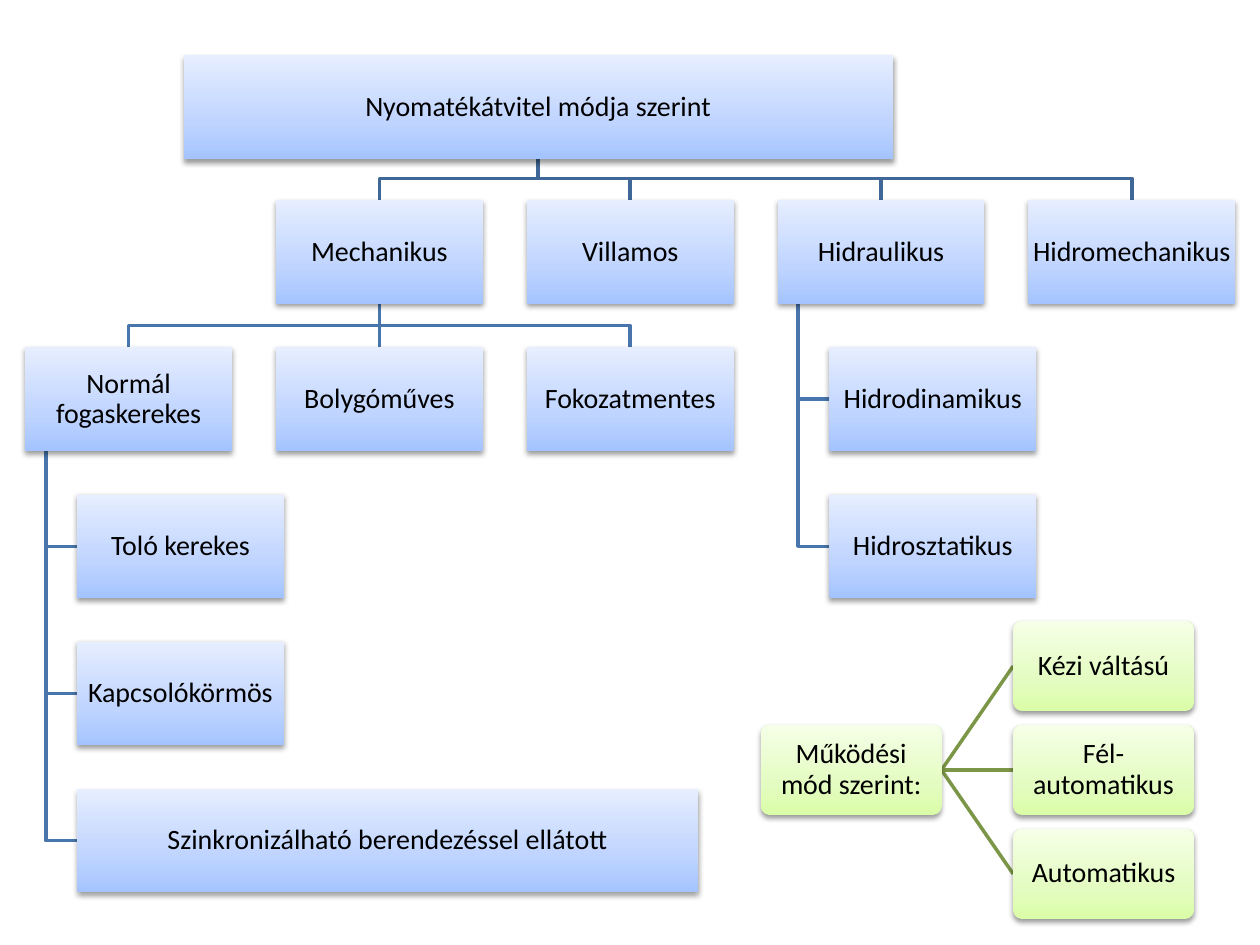
"""Build a slide with two trees that sort gearboxes by drive and by mode."""
from pptx import Presentation
from pptx.dml.color import RGBColor
from pptx.enum.shapes import MSO_CONNECTOR, MSO_SHAPE
from pptx.enum.text import MSO_ANCHOR, PP_ALIGN
from pptx.oxml import parse_xml
from pptx.oxml.ns import nsdecls
from pptx.util import Pt


def color(code):
    return RGBColor.from_string(code)


def style(line, code):
    line.line.color.rgb = color(code)
    line.line.width = Pt(2)
    line.shadow.inherit = False
    tree.insert(2, line._element)


deck = Presentation()
deck.slide_width, deck.slide_height = Pt(720), Pt(540)
slide = deck.slides.add_slide(deck.slide_layouts[6])
shapes = slide.shapes
tree = shapes._spTree

WIDE, HIGH = 118.3, 59.2
LEFT, STEP = 14.4, 143.3
TOP, PITCH = 114.4, 84.1
INDENT, HANG, BEND = 29.6, 11.8, 12.4
BLUE = ("A4C4FF", "BFD4FF", "E6EEFF")
GREEN = ("DAFDA7", "E4FCC2", "F5FFE7")

spots = [("Nyomatékátvitel módja szerint", 104.9, 31.7, 405.3)]
grid = [
    ("Mechanikus", 1, 0, 0), ("Villamos", 2, 0, 0),
    ("Hidraulikus", 3, 0, 0), ("Hidromechanikus", 4, 0, 0),
    ("Normál fogaskerekes", 0, 1, 0), ("Bolygóműves", 1, 1, 0),
    ("Fokozatmentes", 2, 1, 0), ("Hidrodinamikus", 3, 1, 1),
    ("Hidrosztatikus", 3, 2, 1), ("Toló kerekes", 0, 2, 1),
    ("Kapcsolókörmös", 0, 3, 1),
    ("Szinkronizálható berendezéssel ellátott", 0, 4, 1),
]
for name, col, row, deep in grid:
    wide = 354.8 if row == 4 else WIDE
    spots.append((name, LEFT + col * STEP + deep * INDENT, TOP + row * PITCH, wide))
cards = [(MSO_SHAPE.RECTANGLE, BLUE, HIGH, *spot) for spot in spots]

modes = ["Kézi váltású", "Fél-automatikus", "Automatikus"]
round_spots = [("Működési mód szerint:", 434.8, 414.2)]
round_spots += [(name, 579, 354.8 + 59.4 * i) for i, name in enumerate(modes)]
cards += [(MSO_SHAPE.ROUNDED_RECTANGLE, GREEN, 51.6, *spot, 103.2) for spot in round_spots]

boxes = {}
for kind, tones, high, name, x, y, wide in cards:
    box = shapes.add_shape(kind, Pt(x), Pt(y), Pt(wide), Pt(high))
    if kind == MSO_SHAPE.ROUNDED_RECTANGLE:
        box.adjustments[0] = 0.1
    box.line.fill.background()
    stops = "".join(
        f'<a:gs pos="{pos}"><a:srgbClr val="{tone}"/></a:gs>'
        for pos, tone in zip((0, 35000, 100000), tones))
    box._element.spPr.insert(2, parse_xml(
        f'<a:gradFill {nsdecls("a")} rotWithShape="1"><a:gsLst>{stops}</a:gsLst>'
        '<a:lin ang="16200000" scaled="0"/></a:gradFill>'))
    box.shadow.inherit = False
    box._element.spPr[-1].append(parse_xml(
        f'<a:outerShdw {nsdecls("a")} blurRad="{Pt(3.1)}" dist="{Pt(1.6)}" dir="5400000" '
        'rotWithShape="0"><a:srgbClr val="000000"><a:alpha val="38000"/></a:srgbClr>'
        '</a:outerShdw>'))
    frame = box.text_frame
    pad = Pt(0.7) if tones == BLUE else Pt(2.2)
    look = dict(word_wrap=True, vertical_anchor=MSO_ANCHOR.MIDDLE, margin_left=pad,
                margin_right=pad, margin_top=pad, margin_bottom=pad)
    for key, value in look.items():
        setattr(frame, key, value)
    para = frame.paragraphs[0]
    para.alignment, para.line_spacing = PP_ALIGN.CENTER, 0.9
    run = para.add_run()
    run.text = name
    for key, value in dict(name="Calibri", size=Pt(16)).items():
        setattr(run.font, key, value)
    run.font.color.rgb = color("000000")
    boxes[name] = box

root = spots[0][0]
forks = [(root, kid[0], "3F6797") for kid in grid[:4]]
forks += [("Mechanikus", kid, "4875AC") for kid in ("Normál fogaskerekes", "Fokozatmentes")]
hangs = [("Hidraulikus", kid[0]) for kid in grid[7:9]]
hangs += [("Normál fogaskerekes", kid[0]) for kid in grid[9:]]
routes = []
for head, kid, tone in forks:
    up, low = boxes[head], boxes[kid]
    start, end = up.left + up.width // 2, low.left + low.width // 2
    bend = low.top - Pt(BEND)
    routes.append((tone, [(start, up.top + up.height), (start, bend), (end, bend), (end, low.top)]))
for head, kid in hangs:
    up, low = boxes[head], boxes[kid]
    x, y = up.left + Pt(HANG), low.top + low.height // 2
    routes.append(("4875AC", [(x, up.top + up.height), (x, y), (low.left, y)]))
for tone, route in routes:
    pen = shapes.build_freeform(*route[0])
    pen.add_line_segments(route[1:], close=False)
    path = pen.convert_to_shape()
    path.fill.background()
    style(path, tone)

links = [("Mechanikus", 2, "Bolygóműves", 0, "4875AC")]
links += [(round_spots[0][0], 3, mode, 1, "7C9647") for mode in modes]
for head, out, kid, into, tone in links:
    link = shapes.add_connector(MSO_CONNECTOR.STRAIGHT, 0, 0, 0, 0)
    link.begin_connect(boxes[head], out)
    link.end_connect(boxes[kid], into)
    link._element.spPr.append(parse_xml(f'<a:effectLst {nsdecls("a")}/>'))
    link.line.color.rgb = color(tone)
    link.line.width = Pt(2)
    tree.insert(2, link._element)

deck.save("out.pptx")
